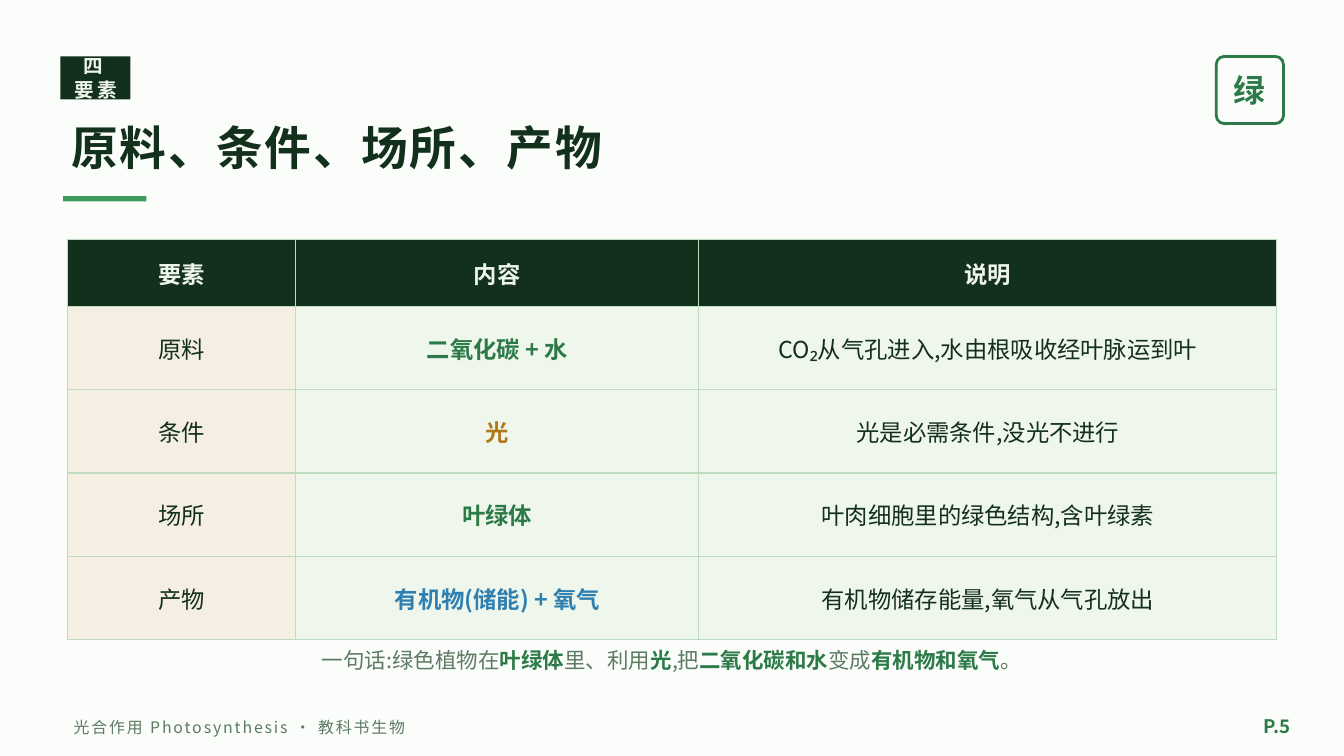
from dataclasses import dataclass

from lxml import etree
from pptx import Presentation
from pptx.dml.color import RGBColor
from pptx.enum.lang import MSO_LANGUAGE_ID
from pptx.enum.shapes import MSO_SHAPE
from pptx.enum.text import MSO_ANCHOR, MSO_AUTO_SIZE, PP_ALIGN
from pptx.oxml.ns import qn
from pptx.util import Pt

LEFT, CENTER, RIGHT = PP_ALIGN.LEFT, PP_ALIGN.CENTER, PP_ALIGN.RIGHT
MIDDLE = MSO_ANCHOR.MIDDLE
NO_AUTOFIT = MSO_AUTO_SIZE.NONE
RECTANGLE, ROUNDED = MSO_SHAPE.RECTANGLE, MSO_SHAPE.ROUNDED_RECTANGLE
CHINESE = MSO_LANGUAGE_ID.SIMPLIFIED_CHINESE
TITLE_ONLY = 5


@dataclass(frozen=True)
class Theme:
    font: str = "Noto Sans CJK SC"
    background: str = "FBFDFA"
    dark: str = "13301C"
    light: str = "EEF5EA"
    green: str = "2C7A47"
    accent: str = "3F9B5E"
    amber: str = "B07A1A"
    blue: str = "2F7FB0"
    muted: str = "5D7A62"
    label_fill: str = "F4EFE2"
    cell_fill: str = "EFF6EB"
    border: str = "BEDCC0"
    title_size: float = 25
    badge_size: float = 17
    table_size: float = 12.5
    summary_size: float = 11.5
    tag_size: float = 10.5
    page_size: float = 10
    footer_size: float = 8.5


THEME = Theme()
HEADINGS = ("要素", "内容", "说明")
ELEMENTS = (
    ("原料", "二氧化碳 + 水", "CO₂从气孔进入,水由根吸收经叶脉运到叶", THEME.green),
    ("条件", "光", "光是必需条件,没光不进行", THEME.amber),
    ("场所", "叶绿体", "叶肉细胞里的绿色结构,含叶绿素", THEME.green),
    ("产物", "有机物(储能) + 氧气", "有机物储存能量,氧气从气孔放出", THEME.blue),
)
# Plain and emphasised pieces alternate
SUMMARY = ("一句话:绿色植物在", "叶绿体", "里、利用", "光", ",把",
           "二氧化碳和水", "变成", "有机物和氧气", "。")


def rgb(color):
    return RGBColor.from_string(color)


def add_span(para, text, *, size, color, bold=False, spacing=0, align=LEFT):
    """Append formatted text to a paragraph."""
    para.alignment = align
    span = para.add_run()
    span.text = text
    font = span.font
    font.name, font.size, font.bold = THEME.font, Pt(size), bold
    font.color.rgb = rgb(color)
    font.language_id = CHINESE
    properties = span._r.get_or_add_rPr()
    if spacing:
        properties.set("spc", str(spacing * 100))
    etree.SubElement(properties, qn("a:ea"), typeface=THEME.font)


def prepare_frame(box):
    """Set wrapping and anchoring, and return the first paragraph."""
    frame = box.text_frame
    frame.word_wrap = True
    frame.auto_size = NO_AUTOFIT
    frame.vertical_anchor = MIDDLE
    return frame.paragraphs[0]


def add_box(page, bounds):
    return prepare_frame(page.shapes.add_textbox(*map(Pt, bounds)))


def add_panel(page, kind, bounds, fill=None, line=None):
    panel = page.shapes.add_shape(kind, *map(Pt, bounds))
    panel.shadow.inherit = False
    if fill:
        panel.fill.solid()
        panel.fill.fore_color.rgb = rgb(fill)
    else:
        panel.fill.background()
    if line:
        panel.line.color.rgb = rgb(line)
        panel.line.width = Pt(1.5)
    else:
        panel.line.fill.background()
    return panel


def fill_cell(cell, text, fill, **text_format):
    cell.vertical_anchor = MIDDLE
    add_span(cell.text_frame.paragraphs[0], text,
             size=THEME.table_size, align=CENTER, **text_format)
    properties = cell._tc.get_or_add_tcPr()
    # Borders come before the fill in the cell properties
    for side in ("a:lnL", "a:lnR", "a:lnT", "a:lnB"):
        line = etree.SubElement(properties, qn(side), w=str(Pt(0.75)))
        solid = etree.SubElement(line, qn("a:solidFill"))
        etree.SubElement(solid, qn("a:srgbClr"), val=THEME.border)
    cell.fill.solid()
    cell.fill.fore_color.rgb = rgb(fill)


def add_element_table(page):
    widths = (122.4, 216, 309.6)
    heights = (36,) + (44.64,) * len(ELEMENTS)
    bounds = (36, 128.16, sum(widths), sum(heights))
    table = page.shapes.add_table(len(heights), len(widths), *map(Pt, bounds)).table
    for column, width in zip(table.columns, widths):
        column.width = Pt(width)
    for row, height in zip(table.rows, heights):
        row.height = Pt(height)

    for column, heading in enumerate(HEADINGS):
        fill_cell(table.cell(0, column), heading, THEME.dark,
                  color=THEME.light, bold=True)
    for row, (label, content, note, color) in enumerate(ELEMENTS, start=1):
        fill_cell(table.cell(row, 0), label, THEME.label_fill, color=THEME.dark)
        fill_cell(table.cell(row, 1), content, THEME.cell_fill, color=color, bold=True)
        fill_cell(table.cell(row, 2), note, THEME.cell_fill, color=THEME.dark)


def add_heading(page):
    # Section tag
    add_panel(page, RECTANGLE, (32.4, 30.24, 37.44, 23.04), fill=THEME.dark)
    add_span(add_box(page, (32.4, 29.52, 37.44, 24.48)), "四要素", size=THEME.tag_size,
             color=THEME.light, bold=True, spacing=2, align=CENTER)

    # Title and underline
    title = page.shapes.title
    title.left, title.top, title.width, title.height = map(Pt, (30.96, 56.16, 648, 44.64))
    add_span(prepare_frame(title), "原料、条件、场所、产物", size=THEME.title_size,
             color=THEME.dark, bold=True, spacing=1)
    add_panel(page, RECTANGLE, (33.84, 105.12, 44.64, 2.88), fill=THEME.accent)

    # Corner badge
    badge = add_panel(page, ROUNDED, (651.6, 30.24, 36, 36), line=THEME.green)
    badge.adjustments[0] = 0.12
    add_span(add_box(page, (651.6, 29.52, 36, 37.44)), "绿", size=THEME.badge_size,
             color=THEME.green, bold=True, align=CENTER)


def add_summary(page):
    para = add_box(page, (36, 335.52, 648, 36))
    for index, text in enumerate(SUMMARY):
        strong = index % 2 == 1
        add_span(para, text, size=THEME.summary_size, bold=strong, align=CENTER,
                 color=THEME.green if strong else THEME.muted)


def add_footer(page):
    add_span(add_box(page, (32.4, 378.72, 489.6, 21.6)),
             "光合作用 Photosynthesis · 教科书生物",
             size=THEME.footer_size, color=THEME.muted, spacing=1)
    add_span(add_box(page, (655.2, 377.28, 43.2, 23.04)), "P.5",
             size=THEME.page_size, color=THEME.green, bold=True, align=RIGHT)


def main():
    deck = Presentation()
    deck.slide_width, deck.slide_height = Pt(720), Pt(405)
    page = deck.slides.add_slide(deck.slide_layouts[TITLE_ONLY])
    page.background.fill.solid()
    page.background.fill.fore_color.rgb = rgb(THEME.background)
    add_heading(page)
    add_element_table(page)
    add_summary(page)
    add_footer(page)
    deck.save("out.pptx")


if __name__ == "__main__":
    main()
